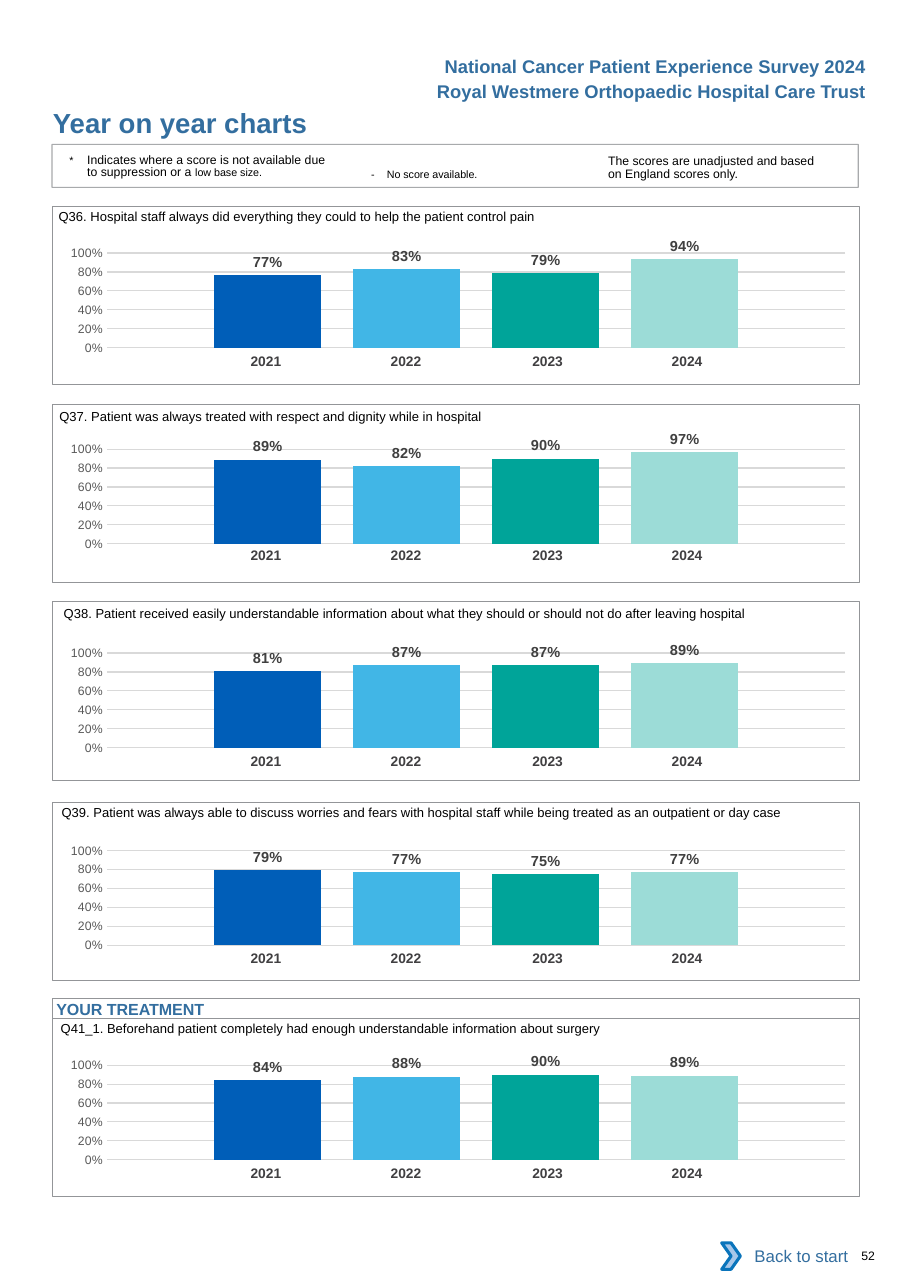
from dataclasses import dataclass

from lxml.etree import SubElement
from pptx import Presentation
from pptx.chart.data import CategoryChartData
from pptx.dml.color import RGBColor
from pptx.enum.chart import XL_CHART_TYPE as ChartType
from pptx.enum.chart import XL_LABEL_POSITION as LabelPos
from pptx.enum.chart import XL_TICK_MARK as Tick
from pptx.enum.shapes import MSO_SHAPE as Shape
from pptx.enum.text import MSO_ANCHOR as Anchor
from pptx.enum.text import PP_ALIGN as Align
from pptx.oxml.ns import qn
from pptx.util import Cm, Pt


@dataclass(frozen=True)
class Theme:
    font: str = "Arial"
    chart_font: str = "Calibri"
    black: str = "000000"
    blue: str = "336E9F"
    frame: str = "939598"
    year: str = "414042"
    label: str = "404040"
    axis: str = "595959"
    grid: str = "D9D9D9"
    white: str = "FFFFFF"
    arrow_fill: str = "A8C7E9"
    arrow_line: str = "0A74BB"
    bars: tuple = ("005EB8", "41B6E6", "00A499", "9CDCD7")
    title: float = 18
    header: float = 12
    link: float = 11
    section: float = 10.5
    chart: float = 10
    value: float = 9.5
    years: float = 9
    question: float = 8.5
    small: float = 8
    note: float = 7


T = Theme()
LEFT, WIDTH, PANEL_HEIGHT = 1.22, 18.59, 4.11
YEARS = ("2021", "2022", "2023", "2024")
YEAR_COLUMNS = ((3.23, 0), (3.23, 0), (3.4, 0.1), (3.23, 0.3))

PANELS = (
    ("Q36. Hospital staff always did everything they could to help the patient control pain",
     1.35, 4.57, 4.75, 5.36, 8.03, (0.77, 0.83, 0.79, 0.94)),
    ("Q37. Patient was always treated with respect and dignity while in hospital",
     1.37, 9.19, 9.32, 9.88, 12.5, (0.89, 0.82, 0.9, 0.97)),
    ("Q38. Patient received easily understandable information about what they should "
     "or should not do after leaving hospital",
     1.47, 13.72, 13.87, 14.58, 17.25, (0.81, 0.87, 0.87, 0.89)),
    ("Q39. Patient was always able to discuss worries and fears with hospital staff "
     "while being treated as an outpatient or day case",
     1.42, 18.31, 18.49, 19.13, 21.79, (0.79, 0.77, 0.75, 0.77)),
    ("Q41_1. Beforehand patient completely had enough understandable information about surgery",
     1.4, 23.29, 23.47, 24.08, 26.75, (0.84, 0.88, 0.9, 0.89)),
)


def rgb(value):
    return RGBColor.from_string(value)


def style(font, size, color, bold=False, name=T.font):
    font.name, font.size, font.bold = name, Pt(size), bold
    font.color.rgb = rgb(color)


def set_margins(target, left=0, top=0, right=0, bottom=0):
    target.margin_left, target.margin_top = Cm(left), Cm(top)
    target.margin_right, target.margin_bottom = Cm(right), Cm(bottom)


def add_text(slide, text, box, size, color=T.black, bold=False, align=Align.LEFT, top=0):
    sp = slide.shapes.add_textbox(*map(Cm, box))
    tf = sp.text_frame
    tf.word_wrap = True
    set_margins(tf, top=top)
    tf.text = text
    p = tf.paragraphs[0]
    p.alignment = align
    style(p.runs[0].font, size, color, bold)
    return p


def hang(p, indent):
    pPr = p._p.get_or_add_pPr()
    pPr.set("marL", str(Cm(indent)))
    pPr.set("indent", str(-Cm(indent)))


def add_box(slide, box, fill=None, line=None, width=0.5, kind=Shape.RECTANGLE):
    sp = slide.shapes.add_shape(kind, *map(Cm, box))
    sp.shadow.inherit = False
    if fill:
        sp.fill.solid()
        sp.fill.fore_color.rgb = rgb(fill)
    else:
        sp.fill.background()
    if line:
        sp.line.color.rgb = rgb(line)
        sp.line.width = Pt(width)
    else:
        sp.line.fill.background()
    return sp


def fill_box(sp, text, size, align, anchor, bold=False):
    tf = sp.text_frame
    tf.vertical_anchor = anchor
    tf.text = text
    p = tf.paragraphs[0]
    p.alignment = align
    style(p.runs[0].font, size, T.blue, bold)


def add_years(slide, top):
    width = sum(w for w, _ in YEAR_COLUMNS)
    frame = slide.shapes.add_table(1, len(YEARS), Cm(4.39), Cm(top), Cm(width), Cm(0.69))
    table = frame.table
    table.first_row = table.horz_banding = False
    for i, (year, (col_width, right)) in enumerate(zip(YEARS, YEAR_COLUMNS)):
        table.columns[i].width = Cm(col_width)
        cell = table.cell(0, i)
        cell.fill.background()
        set_margins(cell, 0.25, 0.13, right, 0.13)
        cell.text = year
        p = cell.text_frame.paragraphs[0]
        p.alignment = Align.CENTER
        style(p.runs[0].font, T.years, T.year, True)


def place_plot(chart):
    plot_area = chart._chartSpace.chart.plotArea
    for old in plot_area.findall(qn("c:layout")):
        plot_area.remove(old)
    layout = SubElement(plot_area, qn("c:layout"))
    plot_area.insert(0, layout)
    manual = SubElement(layout, qn("c:manualLayout"))
    settings = (("layoutTarget", "inner"), ("xMode", "edge"), ("yMode", "edge"),
                ("x", "0.08"), ("y", "0.145"), ("w", "0.915"), ("h", "0.666"))
    for tag, value in settings:
        SubElement(manual, qn(f"c:{tag}")).set("val", value)


def add_scores(slide, top, scores):
    data = CategoryChartData(number_format="0%")
    data.categories = ["1"]
    for i, score in enumerate(scores, 1):
        data.add_series(f"Series {i}", [score])
    chart = slide.shapes.add_chart(ChartType.COLUMN_CLUSTERED, Cm(0.99), Cm(top),
                                   Cm(WIDTH), Cm(3.28), data).chart
    chart.has_legend = chart.has_title = False
    style(chart.font, T.chart, T.black, name=T.chart_font)
    place_plot(chart)
    chart.category_axis.visible = False

    axis = chart.value_axis
    axis.minimum_scale, axis.maximum_scale, axis.major_unit = 0, 1, 0.2
    axis.major_tick_mark = axis.minor_tick_mark = Tick.NONE
    axis.format.line.fill.background()
    axis.major_gridlines.format.line.color.rgb = rgb(T.grid)
    axis.major_gridlines.format.line.width = Pt(0.75)
    axis.tick_labels.number_format = "0%"
    axis.tick_labels.number_format_is_linked = False
    style(axis.tick_labels.font, T.small, T.axis)

    plot = chart.plots[0]
    plot.gap_width, plot.overlap, plot.vary_by_categories = 200, -30, False
    for series, color in zip(plot.series, T.bars):
        series.format.fill.solid()
        series.format.fill.fore_color.rgb = rgb(color)
        labels = series.data_labels
        labels.show_value = True
        labels.position = LabelPos.OUTSIDE_END
        labels.number_format = "0%"
        labels.number_format_is_linked = False
        style(labels.font, T.value, T.label, True)


def add_panel(slide, question, text_left, text_top, top, chart_top, years_top, scores):
    add_years(slide, years_top)
    add_scores(slide, chart_top, scores)
    add_box(slide, (LEFT, top, WIDTH, PANEL_HEIGHT), line=T.frame)
    add_text(slide, question, (text_left, text_top, 18.3, 0.61), T.question, top=0.23)


def add_legend(slide):
    sp = add_box(slide, (1.2, 3.33, WIDTH, 0.99), line=T.frame, width=0.75)
    color = sp.line.fill._xPr.find(".//" + qn("a:srgbClr"))
    SubElement(color, qn("a:alpha")).set("val", "80000")

    suppressed = add_text(slide, "*\t", (1.6, 3.48, 6.05, 0.65), T.note, top=0.08)
    hang(suppressed, 0.41)
    for text, size in (("Indicates where a score is not available due to suppression or a ", T.small),
                       ("low base size.", T.note)):
        r = suppressed.add_run()
        r.text = text
        style(r.font, size, T.black)
    missing = add_text(slide, "-\tNo score available.", (8.56, 3.86, 4.4, 0.4), T.note)
    hang(missing, 0.36)
    unadjusted = add_text(slide, "The scores are unadjusted and based on England scores only.",
                          (14.02, 3.51, 5, 0.65), T.small, top=0.08)
    for p in (suppressed, unadjusted):
        p.line_spacing = Pt(8.1)


def add_header(slide):
    lines = ("National Cancer Patient Experience Survey 2024",
             "Royal Westmere Orthopaedic Hospital Care Trust")
    for i, line in enumerate(lines):
        add_text(slide, line, (8.97, 1.15 + 0.57 * i, 11, 0.76), T.header, T.blue, True,
                 Align.RIGHT, top=0.13)
    add_text(slide, "Year on year charts", (1.22, 2.44, 11.4, 0.76), T.title, T.blue, True)


def add_footer(slide):
    link = add_box(slide, (16.81, 28.42, 3, 1.07), fill=T.white)
    fill_box(link, "Back to start", T.link, Align.RIGHT, Anchor.MIDDLE)
    add_box(slide, (16.64, 28.65, 0.43, 0.61), T.arrow_fill, T.arrow_line, 2, Shape.CHEVRON)
    add_text(slide, "52", (19.86, 28.78, 1.04, 0.33), T.small)


def main():
    prs = Presentation()
    prs.slide_width, prs.slide_height = Cm(20.98), Cm(29.69)
    slide = prs.slides.add_slide(prs.slide_layouts[6])
    add_header(slide)
    add_legend(slide)
    for panel in PANELS:
        add_panel(slide, *panel)
    section = add_box(slide, (LEFT, 23.01, WIDTH, 0.46), line=T.frame)
    set_margins(section.text_frame, left=0.08, top=0.03)
    fill_box(section, "YOUR TREATMENT", T.section, Align.LEFT, Anchor.TOP, True)
    add_footer(slide)
    prs.save("out.pptx")


if __name__ == "__main__":
    main()
